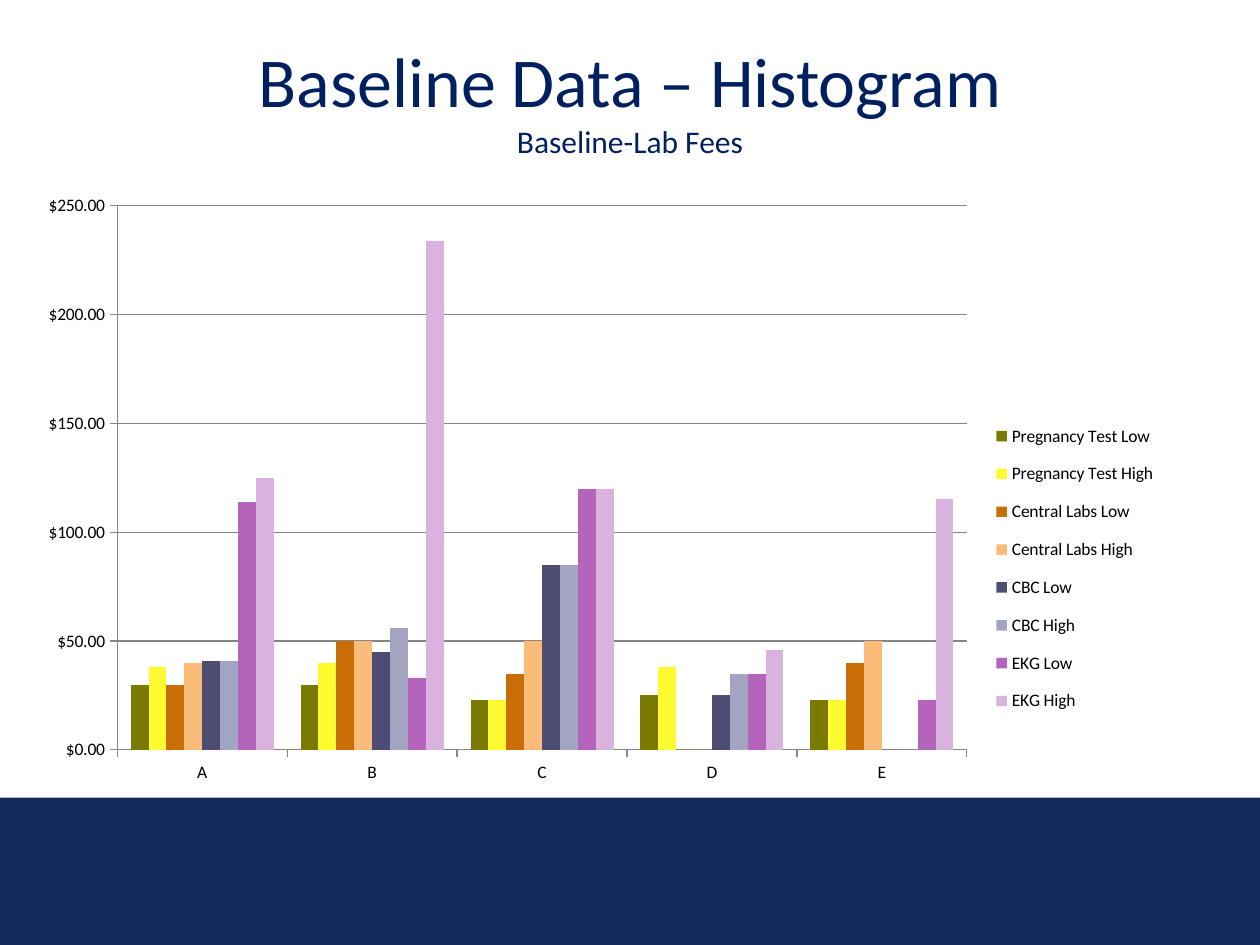
from lxml import etree
from pptx import Presentation
from pptx.chart.data import CategoryChartData
from pptx.dml.color import RGBColor
from pptx.enum.chart import XL_CHART_TYPE as ChartType
from pptx.enum.chart import XL_LEGEND_POSITION as LegendPosition
from pptx.enum.chart import XL_TICK_MARK as TickMark
from pptx.enum.shapes import MSO_SHAPE as Shape
from pptx.enum.text import MSO_ANCHOR as Anchor
from pptx.enum.text import PP_ALIGN as Align
from pptx.oxml.ns import qn
from pptx.util import Inches, Pt

NAVY = RGBColor(0x12, 0x2A, 0x5D)
TITLE_BLUE = RGBColor(0x00, 0x20, 0x60)
BLACK = RGBColor(0x00, 0x00, 0x00)
AXIS_GRAY = RGBColor(0x86, 0x86, 0x86)
FONT = "Calibri"

SITES = ["A", "B", "C", "D", "E"]
LAB_FEES = [
    ("Pregnancy Test Low", (30, 30, 23, 25, 23), RGBColor(0x7A, 0x79, 0x01)),
    ("Pregnancy Test High", (38, 40, 23, 38, 23), RGBColor(0xFE, 0xFB, 0x31)),
    ("Central Labs Low", (30, 50, 35, 0, 40), RGBColor(0xC9, 0x6D, 0x07)),
    ("Central Labs High", (40, 50, 50, 0, 50), RGBColor(0xFA, 0xBC, 0x78)),
    ("CBC Low", (41, 45, 85, 25, 0), RGBColor(0x4D, 0x4D, 0x73)),
    ("CBC High", (41, 56, 85, 35, 0), RGBColor(0xA3, 0xA3, 0xC2)),
    ("EKG Low", (114, 33, 120, 35, 23), RGBColor(0xB4, 0x65, 0xBB)),
    ("EKG High", (125, 234, 120, 46, 115), RGBColor(0xD9, 0xB2, 0xDD)),
]


def set_format(target, **values):
    for name, value in values.items():
        setattr(target, name, value)


def set_font(font, size, color):
    set_format(font, name=FONT, size=Pt(size))
    font.color.rgb = color


def manual_layout(x, y, w, h, inner=False):
    """Return a c:layout element with the given fractions of the chart."""
    layout = etree.Element(qn("c:layout"))
    manual = etree.SubElement(layout, qn("c:manualLayout"))
    settings = [("layoutTarget", "inner")] if inner else []
    settings += [("xMode", "edge"), ("yMode", "edge")]
    settings += [("x", x), ("y", y), ("w", w), ("h", h)]
    for tag, value in settings:
        etree.SubElement(manual, qn(f"c:{tag}")).set("val", str(value))
    return layout


def add_footer_band(page, left, top, width, height):
    band = page.shapes.add_shape(Shape.RECTANGLE, left, top, width, height)
    band.shadow.inherit = False
    band.fill.solid()
    band.fill.fore_color.rgb = NAVY
    band.line.fill.background()


def place_title(page, left, top, width, height):
    title = page.shapes.title
    set_format(title, left=left, top=top, width=width, height=height)
    set_format(title.text_frame, vertical_anchor=Anchor.MIDDLE, word_wrap=True)
    para = title.text_frame.paragraphs[0]
    para.alignment = Align.CENTER
    heading = para.add_run()
    heading.text = "Baseline Data – Histogram"
    para.add_line_break()
    subtitle = para.add_run()
    subtitle.text = "Baseline-Lab Fees"
    for span, size in ((heading, 40), (subtitle, 18)):
        set_font(span.font, size, TITLE_BLUE)


def add_fee_chart(page, left, top, width, height):
    fees = CategoryChartData(number_format='"$"#,##0.00')
    fees.categories = SITES
    for name, values, _ in LAB_FEES:
        fees.add_series(name, values)
    chart = page.shapes.add_chart(
        ChartType.COLUMN_CLUSTERED, left, top, width, height, fees).chart
    set_format(chart, has_title=False, has_legend=True)
    set_font(chart.font, 10, BLACK)

    # Columns
    plot = chart.plots[0]
    set_format(plot, gap_width=150, overlap=0, vary_by_categories=False)
    for series, (_, _, color) in zip(plot.series, LAB_FEES):
        series.format.fill.solid()
        series.format.fill.fore_color.rgb = color

    # Axes and gridlines
    scale = chart.value_axis
    set_format(scale, minimum_scale=0, maximum_scale=250, major_unit=50,
               has_major_gridlines=True)
    set_format(scale.tick_labels, number_format='"$"#,##0.00',
               number_format_is_linked=False)
    for axis in (chart.category_axis, scale):
        set_format(axis, major_tick_mark=TickMark.OUTSIDE,
                   minor_tick_mark=TickMark.NONE)
    for lined in (chart.category_axis, scale, scale.major_gridlines):
        lined.format.line.color.rgb = AXIS_GRAY
        lined.format.line.width = Pt(0.75)

    # Legend and plot area positions
    legend = chart.legend
    set_format(legend, position=LegendPosition.RIGHT, include_in_layout=False)
    legend_element = chart.element.find(".//" + qn("c:legend"))
    legend_element.find(qn("c:legendPos")).addnext(
        manual_layout(0.81, 0.37, 0.15, 0.53))
    plot_area = chart.element.find(".//" + qn("c:plotArea"))
    for old_layout in plot_area.findall(qn("c:layout")):
        plot_area.remove(old_layout)
    plot_area.insert(0, manual_layout(0.112, 0.036, 0.686, 0.898, inner=True))


def main():
    deck = Presentation()
    set_format(deck, slide_width=Inches(10), slide_height=Inches(7.5))
    page = deck.slides.add_slide(deck.slide_layouts.get_by_name("Title Only"))
    add_footer_band(page, Inches(0), Inches(6.33), Inches(10), Inches(1.17))
    place_title(page, Inches(0.5), Inches(0.21), Inches(9), Inches(1.15))
    add_fee_chart(page, Inches(-0.17), Inches(1.46), Inches(9.83), Inches(4.81))
    deck.save("out.pptx")


if __name__ == "__main__":
    main()
